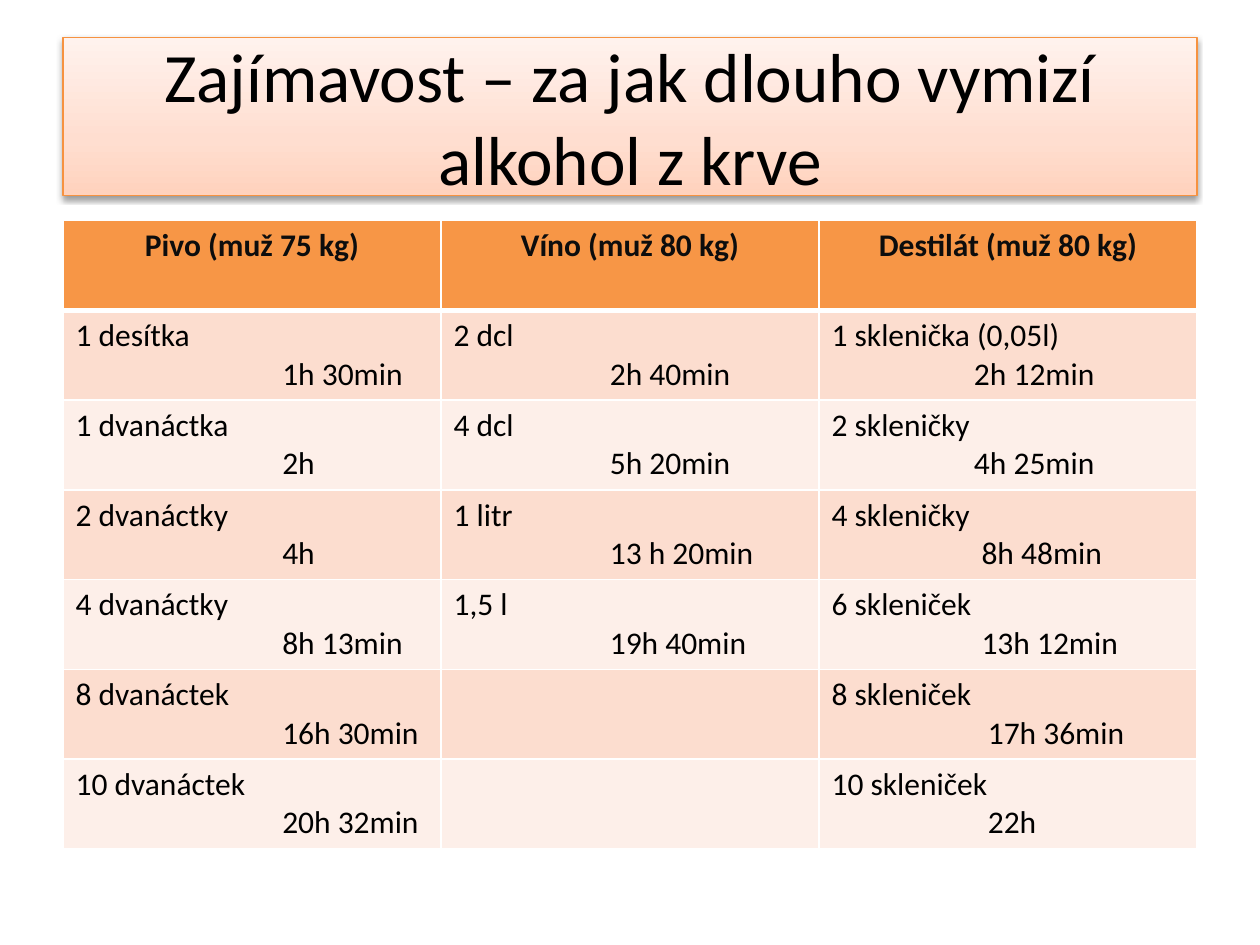
from lxml.etree import SubElement
from pptx import Presentation
from pptx.dml.color import RGBColor
from pptx.enum.shapes import MSO_SHAPE
from pptx.enum.text import MSO_ANCHOR, PP_ALIGN
from pptx.oxml import parse_xml
from pptx.oxml.ns import nsdecls, qn
from pptx.util import Inches, Pt

HEADINGS = ["Pivo (muž 75 kg)", "Víno (muž 80 kg)", "Destilát (muž 80 kg)"]

# Each drink: (amount, time to sober up, indent of the time in inches)
BEER = [(amount, time, 1.64) for amount, time in [
    ("1 desítka", "1h 30min"), ("1 dvanáctka", "2h"), ("2 dvanáctky", "4h"),
    ("4 dvanáctky", "8h 13min"), ("8 dvanáctek", "16h 30min"), ("10 dvanáctek", "20h 32min")]]
WINE = [(amount, time, 1.24) for amount, time in [
    ("2 dcl", "2h 40min"), ("4 dcl", "5h 20min"), ("1 litr", "13 h 20min"), ("1,5 l", "19h 40min")]]
SPIRITS = [
    ("1 sklenička (0,05l)", "2h 12min", 1.13), ("2 skleničky", "4h 25min", 1.13),
    ("4 skleničky", "8h 48min", 1.19), ("6 skleniček", "13h 12min", 1.19),
    ("8 skleniček", "17h 36min", 1.24), ("10 skleniček", "22h", 1.24)]


def color(hex_value):
    return RGBColor.from_string(hex_value)


class SlideStyle:
    TITLE = {"name": "Calibri", "size": Pt(39.6), "bold": False}
    HEADING = {"name": "Calibri", "size": Pt(18), "bold": True}
    BODY = {"name": "Calibri", "size": Pt(18), "bold": False}
    TEXT, HEADING_TEXT = "000000", "0D0D0D"
    HEADING_FILL, BANDS = "F79646", ("FCDDCF", "FDEFE9")
    TITLE_LINE, GRID = "F69240", "FFFFFF"
    TITLE_GRADIENT = [(0, "FFD2BD"), (35, "FFDED0"), (100, "FFF2ED")]

    def __init__(self, slide):
        self.slide = slide

    def add_text(self, paragraph, text, font_format, text_color, align=PP_ALIGN.LEFT, indent=0):
        paragraph.alignment = align
        run = paragraph.add_run()
        run.text = text
        for attribute, value in font_format.items():
            setattr(run.font, attribute, value)
        run.font.color.rgb = color(text_color)
        if indent:
            properties = paragraph._p.get_or_add_pPr()
            properties.set("marL", str(Inches(indent)))
            properties.set("indent", "0")

    def title(self, text, left, top, width, height):
        banner = self.slide.shapes.add_shape(
            MSO_SHAPE.RECTANGLE, Inches(left), Inches(top), Inches(width), Inches(height))
        banner.line.color.rgb = color(self.TITLE_LINE)
        banner.line.width = Pt(0.75)

        # Three-stop gradient running upwards
        banner.fill.gradient()
        banner.fill.gradient_angle = 90
        stops = banner._element.spPr.find(qn("a:gradFill")).find(qn("a:gsLst"))
        for stop in list(stops):
            stops.remove(stop)
        for position, hex_value in self.TITLE_GRADIENT:
            stop = SubElement(stops, qn("a:gs"), pos=str(position * 1000))
            SubElement(stop, qn("a:srgbClr"), val=hex_value)

        # Soft shadow below
        banner.shadow.inherit = False
        banner._element.spPr.find(qn("a:effectLst")).append(parse_xml(
            f'<a:outerShdw {nsdecls("a")} blurRad="{Pt(3.1)}" dist="{Pt(1.6)}" dir="5400000" '
            'rotWithShape="0"><a:srgbClr val="000000"><a:alpha val="38000"/></a:srgbClr>'
            '</a:outerShdw>'))

        frame = banner.text_frame
        frame.word_wrap = True
        frame.vertical_anchor = MSO_ANCHOR.MIDDLE
        self.add_text(frame.paragraphs[0], text, self.TITLE, self.TEXT, PP_ALIGN.CENTER)

    def paint(self, cell, fill, top=1, bottom=1):
        cell.fill.solid()
        cell.fill.fore_color.rgb = color(fill)
        sides = {"lnL": 1, "lnR": 1, "lnT": top, "lnB": bottom}
        for order, (side, points) in enumerate(sides.items()):
            cell._tc.tcPr.insert(order, parse_xml(
                f'<a:{side} {nsdecls("a")} w="{Pt(points)}"><a:solidFill>'
                f'<a:srgbClr val="{self.GRID}"/></a:solidFill></a:{side}>'))

    def table(self, headings, drinks, left, top, width, height):
        row_count = 1 + max(len(entries) for entries in drinks)
        table = self.slide.shapes.add_table(
            row_count, len(headings),
            Inches(left), Inches(top), Inches(width), Inches(height)).table
        for column, (heading, entries) in enumerate(zip(headings, drinks)):
            heading_cell = table.cell(0, column)
            self.paint(heading_cell, self.HEADING_FILL, bottom=3)
            self.add_text(heading_cell.text_frame.paragraphs[0], heading,
                          self.HEADING, self.HEADING_TEXT, PP_ALIGN.CENTER)
            for row in range(1, row_count):
                self.paint(table.cell(row, column), self.BANDS[(row - 1) % 2],
                           top=3 if row == 1 else 1)
            for row, (amount, time, indent) in enumerate(entries, start=1):
                frame = table.cell(row, column).text_frame
                self.add_text(frame.paragraphs[0], amount, self.BODY, self.TEXT)
                self.add_text(frame.add_paragraph(), time, self.BODY, self.TEXT, indent=indent)


def main():
    presentation = Presentation()
    presentation.slide_width, presentation.slide_height = Inches(10), Inches(7.5)
    style = SlideStyle(presentation.slides.add_slide(presentation.slide_layouts[6]))

    # Title banner
    style.title("Zajímavost – za jak dlouho vymizí alkohol z krve", 0.5, 0.3, 9, 1.25)

    # Sobering times by drink
    style.table(HEADINGS, [BEER, WINE, SPIRITS], 0.5, 1.75, 9, 4.99)

    presentation.save("out.pptx")


if __name__ == "__main__":
    main()
